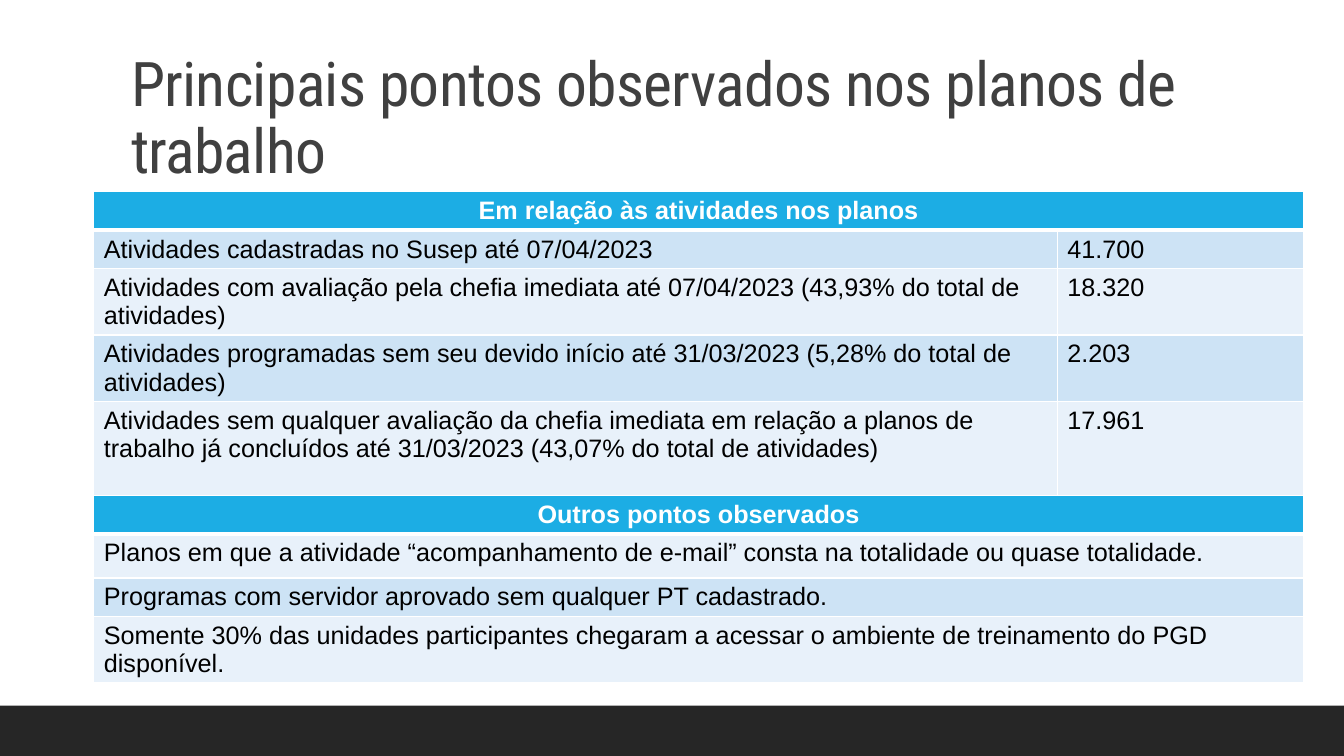
from dataclasses import dataclass
from lxml import etree
from pptx import Presentation
from pptx import util as u
from pptx.dml.color import RGBColor as Rgb
from pptx.enum import shapes, text
from pptx.oxml import ns


@dataclass(frozen=True)
class Theme:
    """Colours, fonts and type sizes of the slide."""
    ink: str = "000000"
    white: str = "FFFFFF"
    head: str = "404040"
    bar: str = "262626"
    blue: str = "1CADE4"
    mid: str = "CDE3F5"
    pale: str = "E8F1FA"
    face: str = "Roboto Condensed"
    body: str = "Arial"
    big: int = 44
    size: int = 18


LOOK = Theme()
COLS = (688.2, 175.8)
ROWS = (
    (27.4, LOOK.blue, "Em relação às atividades nos planos", None),
    (27.4, LOOK.mid, "Atividades cadastradas no Susep até 07/04/2023", "41.700"),
    (47, LOOK.pale, "Atividades com avaliação pela chefia imediata até 07/04/2023 "
     "(43,93% do total de atividades)", "18.320"),
    (47, LOOK.mid, "Atividades programadas sem seu devido início até 31/03/2023 "
     "(5,28% do total de atividades)", "2.203"),
    (67, LOOK.pale, "Atividades sem qualquer avaliação da chefia imediata em relação a "
     "planos de trabalho já concluídos até 31/03/2023 (43,07% do total de atividades)",
     "17.961"),
    (27.4, LOOK.blue, "Outros pontos observados", None),
    (31.7, LOOK.pale, "Planos em que a atividade “acompanhamento de e-mail” consta na "
     "totalidade ou quase totalidade.", None),
    (26.9, LOOK.mid, "Programas com servidor aprovado sem qualquer PT cadastrado.", None),
    (47, LOOK.pale, "Somente 30% das unidades participantes chegaram a acessar o ambiente "
     "de treinamento do PGD disponível.", None),
)


def style(run, face, size, tint, bold=False):
    """Set the font of one run."""
    font = run.font
    font.name, font.size, font.bold = face, u.Pt(size), bold
    font.color.rgb = Rgb.from_string(tint)


def edge(cell, wide):
    """Draw white borders, given the width of each side by its tag."""
    props = cell._tc.get_or_add_tcPr()
    for spot, (tag, size) in enumerate(wide.items()):
        line = etree.Element(ns.qn("a:" + tag), w=str(u.Pt(size)))
        fill = etree.SubElement(line, ns.qn("a:solidFill"))
        etree.SubElement(fill, ns.qn("a:srgbClr"), val=LOOK.white)
        props.insert(spot, line)


def add_bar(slide, left, top, width, height):
    """Draw the dark band at the foot of the slide."""
    bar = slide.shapes.add_shape(shapes.MSO_SHAPE.RECTANGLE, u.Pt(left), u.Pt(top),
                                 u.Pt(width), u.Pt(height))
    bar.shadow.inherit = False
    bar.fill.solid()
    bar.fill.fore_color.rgb = Rgb.from_string(LOOK.bar)
    bar.line.fill.background()


def add_title(slide, left, top, width, height):
    """Place and format the title placeholder."""
    title = slide.shapes.title
    title.left, title.top = u.Pt(left), u.Pt(top)
    title.width, title.height = u.Pt(width), u.Pt(height)
    frame = title.text_frame
    frame.text = "Principais pontos observados nos planos de trabalho"
    frame.word_wrap = True
    frame.auto_size = text.MSO_AUTO_SIZE.NONE
    frame.vertical_anchor = text.MSO_ANCHOR.BOTTOM
    para = frame.paragraphs[0]
    para.alignment, para.line_spacing = text.PP_ALIGN.LEFT, 0.9
    style(para.runs[0], LOOK.face, LOOK.big, LOOK.head)
    para.runs[0].font._element.set("spc", "-50")


def fill_cell(cell, words, tint, head):
    """Write and colour one table cell."""
    cell.fill.solid()
    cell.fill.fore_color.rgb = Rgb.from_string(tint)
    cell.text_frame.text = words
    para = cell.text_frame.paragraphs[0]
    para.alignment = text.PP_ALIGN.CENTER if head else text.PP_ALIGN.LEFT
    for run in para.runs:
        style(run, LOOK.body, LOOK.size, LOOK.white if head else LOOK.ink, head)


def add_grid(slide, left, top, width, height):
    """Build the table of findings in the given box."""
    grid = slide.shapes.add_table(len(ROWS), len(COLS), u.Pt(left), u.Pt(top),
                                  u.Pt(width), u.Pt(height)).table
    for col, part in zip(grid.columns, COLS):
        col.width = u.Pt(width * part / sum(COLS))
    whole = sum(row[0] for row in ROWS)
    after = False
    for spot, (tall, tint, words, count) in enumerate(ROWS):
        grid.rows[spot].height = u.Pt(height * tall / whole)
        first, last = grid.cell(spot, 0), grid.cell(spot, 1)
        head = tint == LOOK.blue
        fill_cell(first, words, tint, head)
        fill_cell(last, count or "", tint, head)
        wide = {"lnL": 1, "lnR": 1, "lnT": 3 if after else 1, "lnB": 3 if head else 1}
        for cell in (first, last):
            edge(cell, wide)
        if count is None:
            first.merge(last)
        after = head


def main():
    """Build the slide and save it."""
    deck = Presentation()
    deck.slide_width, deck.slide_height = u.Pt(960), u.Pt(540)
    slide = deck.slides.add_slide(deck.slide_layouts[5])
    add_bar(slide, 0, 504, 960, 36)
    add_title(slide, 86.4, 22.3, 792, 114.5)
    add_grid(slide, 67, 137, 864, 348.8)
    deck.save("out.pptx")


if __name__ == "__main__":
    main()
